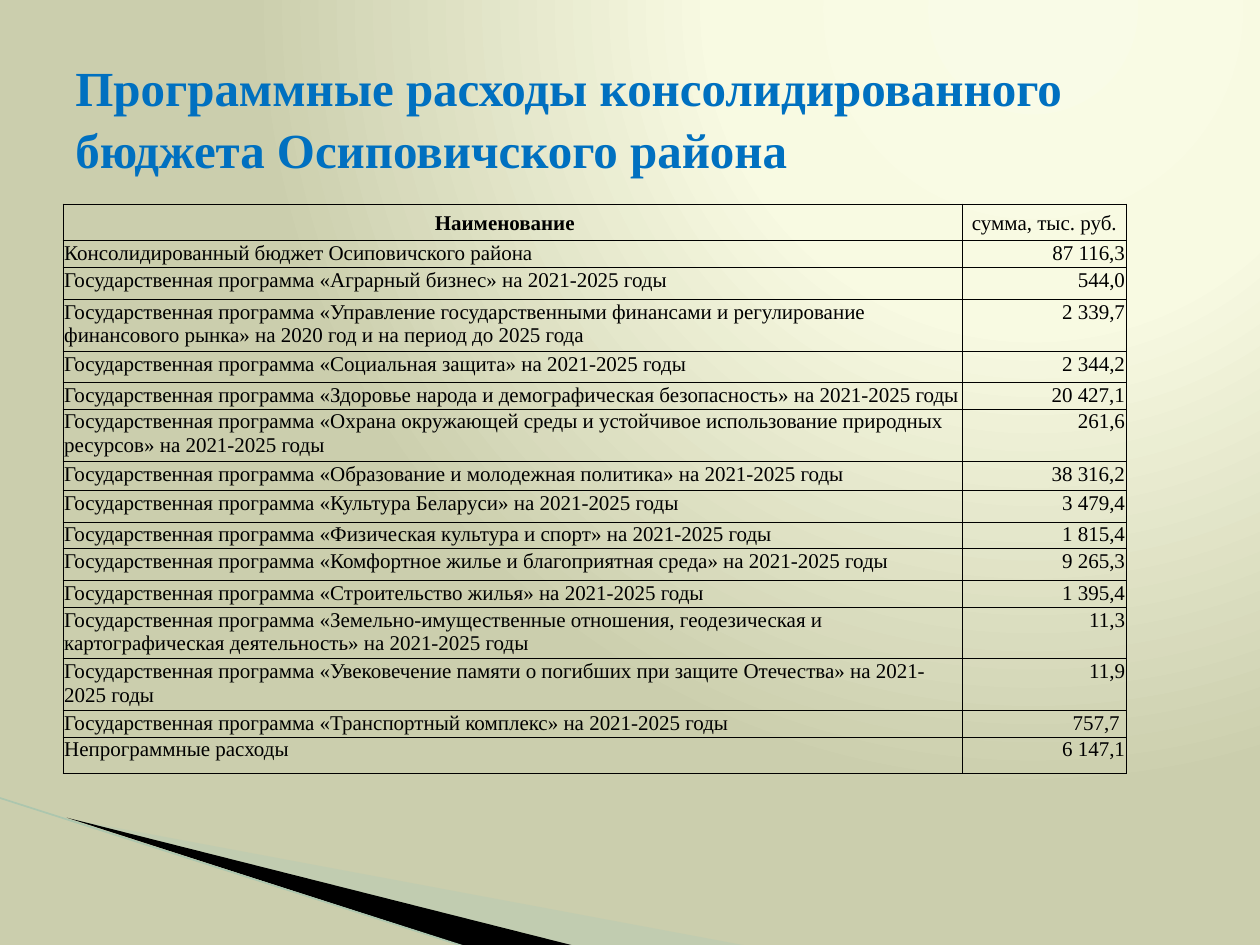
from lxml import etree
from pptx import Presentation
from pptx.dml.color import RGBColor
from pptx.enum.shapes import MSO_CONNECTOR
from pptx.enum.text import MSO_ANCHOR, PP_ALIGN
from pptx.oxml import parse_xml
from pptx.oxml.ns import qn
from pptx.util import Pt

STRAIGHT = MSO_CONNECTOR.STRAIGHT
TOP, MIDDLE = MSO_ANCHOR.TOP, MSO_ANCHOR.MIDDLE
LEFT, CENTER, RIGHT = PP_ALIGN.LEFT, PP_ALIGN.CENTER, PP_ALIGN.RIGHT
NAMESPACE = "http://schemas.openxmlformats.org/drawingml/2006/main"
FONT = "Times New Roman"
COLORS = {
    "glow": "F9FBE7", "cream": "F8FAE2", "olive": "CBCEAD", "mint": "B3CBB5",
    "black": "000000", "sage": "ACC6AE", "blue": "0070C0",
}
TITLE_FORMAT = {"name": FONT, "size": Pt(28), "bold": True}
HEAD_FORMAT = {"name": FONT, "size": Pt(12), "bold": True}
BODY_FORMAT = {"name": FONT, "size": Pt(12), "bold": False}
TITLE = "Программные расходы консолидированного бюджета Осиповичского района"
HEADINGS = ("Наименование", "сумма, тыс. руб.")
PROGRAM = "Государственная программа «{}» на {}"
YEARS = "2021-2025 годы"
PROGRAMS = [
    ("Аграрный бизнес", YEARS, "544,0", 18.5),
    ("Управление государственными финансами и регулирование финансового рынка",
     "2020 год и на период до 2025 года", "2 339,7", 29),
    ("Социальная защита", YEARS, "2 344,2", 18),
    ("Здоровье народа и демографическая безопасность", YEARS, "20 427,1", 15),
    ("Охрана окружающей среды и устойчивое использование природных ресурсов",
     YEARS, "261,6", 30),
    ("Образование и молодежная политика", YEARS, "38 316,2", 16.5),
    ("Культура Беларуси", YEARS, "3 479,4", 18),
    ("Физическая культура и спорт", YEARS, "1 815,4", 15),
    ("Комфортное жилье и благоприятная среда", YEARS, "9 265,3", 18.5),
    ("Строительство жилья", YEARS, "1 395,4", 15),
    ("Земельно-имущественные отношения, геодезическая и картографическая деятельность",
     YEARS, "11,3", 29),
    ("Увековечение памяти о погибших при защите Отечества", YEARS, "11,9", 29),
    ("Транспортный комплекс", YEARS, "757,7", 15),
]
ROWS = [
    (*HEADINGS, 21),
    ("Консолидированный бюджет Осиповичского района", "87 116,3", 15),
    *((PROGRAM.format(name, term), amount, height)
      for name, term, amount, height in PROGRAMS),
    ("Непрограммные расходы", "6 147,1", 21),
]
COLUMN_WIDTHS = (514, 93.6)
RIGHT_INSETS = {"Наименование": 9.7, "757,7": 3.7}


def color(name):
    return RGBColor.from_string(COLORS[name])


def set_font(span, values, color_name):
    for key, value in values.items():
        setattr(span.font, key, value)
    span.font.color.rgb = color(color_name)


def paint_background(page):
    page.background.fill.solid()
    properties = page.element.find(".//" + qn("p:bgPr"))
    stops = "".join(
        f'<a:gs pos="{place}"><a:srgbClr val="{COLORS[name]}"/></a:gs>'
        for place, name in ((0, "glow"), (40000, "cream"), (100000, "olive")))
    gradient = parse_xml(
        f'<a:gradFill xmlns:a="{NAMESPACE}" rotWithShape="1"><a:gsLst>{stops}</a:gsLst>'
        '<a:path path="circle"><a:fillToRect l="65000" t="0" r="0" b="98000"/></a:path>'
        '</a:gradFill>')
    properties.replace(properties.find(qn("a:solidFill")), gradient)


def add_wedge(page, points, color_name, opacity=100):
    corners = [(Pt(x), Pt(y)) for x, y in points]
    builder = page.shapes.build_freeform(*corners[0], scale=1.0)
    builder.add_line_segments(corners[1:], close=True)
    wedge = builder.convert_to_shape()
    wedge.shadow.inherit = False
    wedge.fill.solid()
    wedge.fill.fore_color.rgb = color(color_name)
    wedge.line.fill.background()
    if opacity < 100:
        shade = wedge.element.spPr.find(qn("a:solidFill"))[0]
        etree.SubElement(shade, qn("a:alpha"), val=str(opacity * 1000))


def add_line(page, start, end, color_name, width):
    line = page.shapes.add_connector(STRAIGHT, *(Pt(value) for value in (*start, *end)))
    line.line.color.rgb = color(color_name)
    line.line.width = Pt(width)
    etree.SubElement(line.element.spPr, qn("a:effectLst"))


def add_title(page):
    box = page.shapes.add_textbox(Pt(36), Pt(21.6), Pt(648), Pt(90))
    frame = box.text_frame
    frame.word_wrap = True
    frame.vertical_anchor = MIDDLE
    para = frame.paragraphs[0]
    para.line_spacing = 1.05
    span = para.add_run()
    span.text = TITLE
    set_font(span, TITLE_FORMAT, "blue")


def add_borders(cell):
    properties = cell._tc.get_or_add_tcPr()
    for index, side in enumerate(("lnL", "lnR", "lnT", "lnB")):
        properties.insert(index, parse_xml(
            f'<a:{side} xmlns:a="{NAMESPACE}" w="{Pt(0.5)}"><a:solidFill>'
            f'<a:srgbClr val="{COLORS["black"]}"/></a:solidFill></a:{side}>'))


def fill_cell(cell, text, alignment, anchor, values):
    layout = {
        "margin_left": Pt(0.7), "margin_top": Pt(0.7), "margin_bottom": 0,
        "margin_right": Pt(RIGHT_INSETS.get(text, 0.7)), "vertical_anchor": anchor,
    }
    for key, value in layout.items():
        setattr(cell, key, value)
    cell.fill.background()
    add_borders(cell)
    para = cell.text_frame.paragraphs[0]
    para.alignment = alignment
    span = para.add_run()
    span.text = text
    set_font(span, values, "black")


def add_budget_table(page):
    total_height = sum(row[-1] for row in ROWS)
    table = page.shapes.add_table(
        len(ROWS), len(COLUMN_WIDTHS), Pt(36), Pt(116.6),
        Pt(sum(COLUMN_WIDTHS)), Pt(total_height)).table
    table.first_row = table.horz_banding = False
    for column, width in zip(table.columns, COLUMN_WIDTHS):
        column.width = Pt(width)
    for index, (name, amount, height) in enumerate(ROWS):
        table.rows[index].height = Pt(height)
        is_head = index == 0
        anchor = MIDDLE if is_head else TOP
        fill_cell(table.cell(index, 0), name, CENTER if is_head else LEFT, anchor,
                  HEAD_FORMAT if is_head else BODY_FORMAT)
        fill_cell(table.cell(index, 1), amount, CENTER if is_head else RIGHT, anchor,
                  BODY_FORMAT)


def main():
    deck = Presentation()
    deck.slide_width, deck.slide_height = Pt(720), Pt(540)
    page = deck.slides.add_slide(deck.slide_layouts[6])
    paint_background(page)
    add_wedge(page, [(39.6, 468), (428.4, 540.7), (328.3, 540.7)], "mint", 40)
    add_wedge(page, [(38.2, 467.3), (329, 540.7), (267.8, 541.4)], "black")
    add_line(page, (-0.7, 455.8), (267.1, 541.4), "sage", 0.95)
    add_title(page)
    add_budget_table(page)
    deck.save("out.pptx")


if __name__ == "__main__":
    main()
